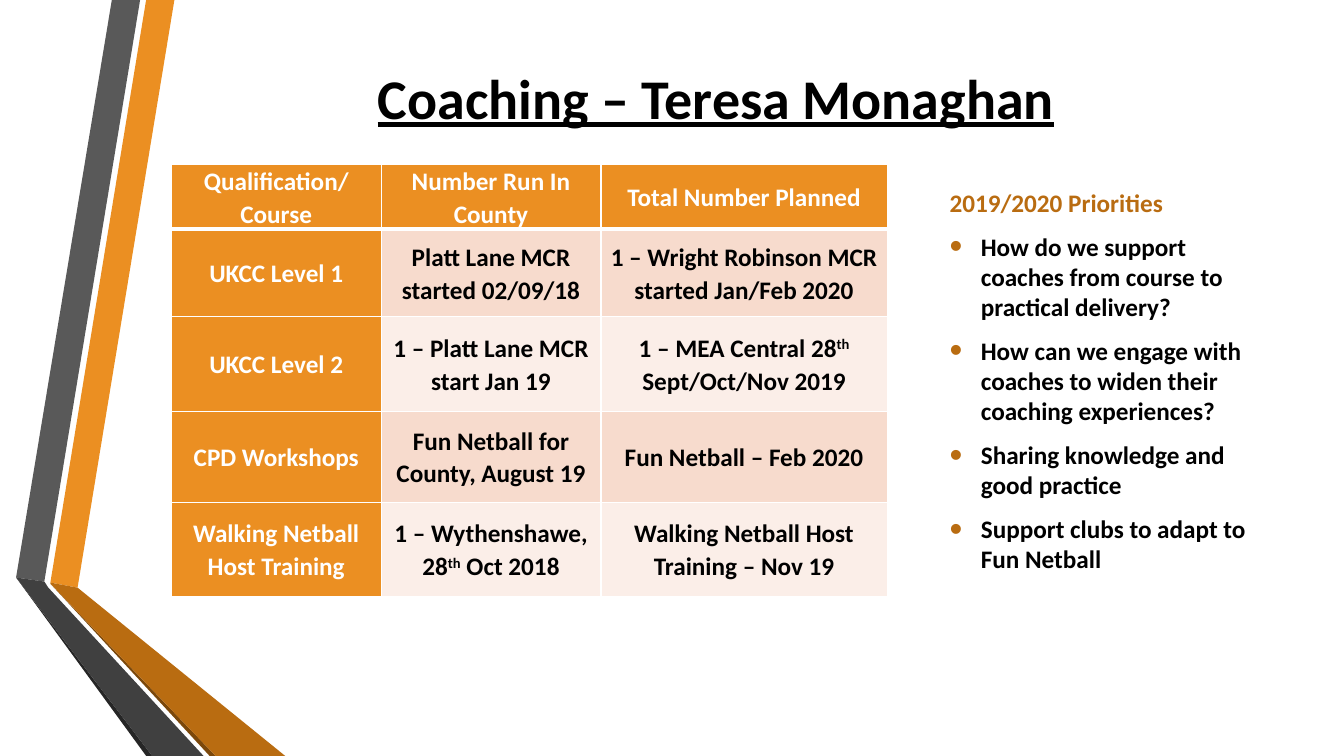
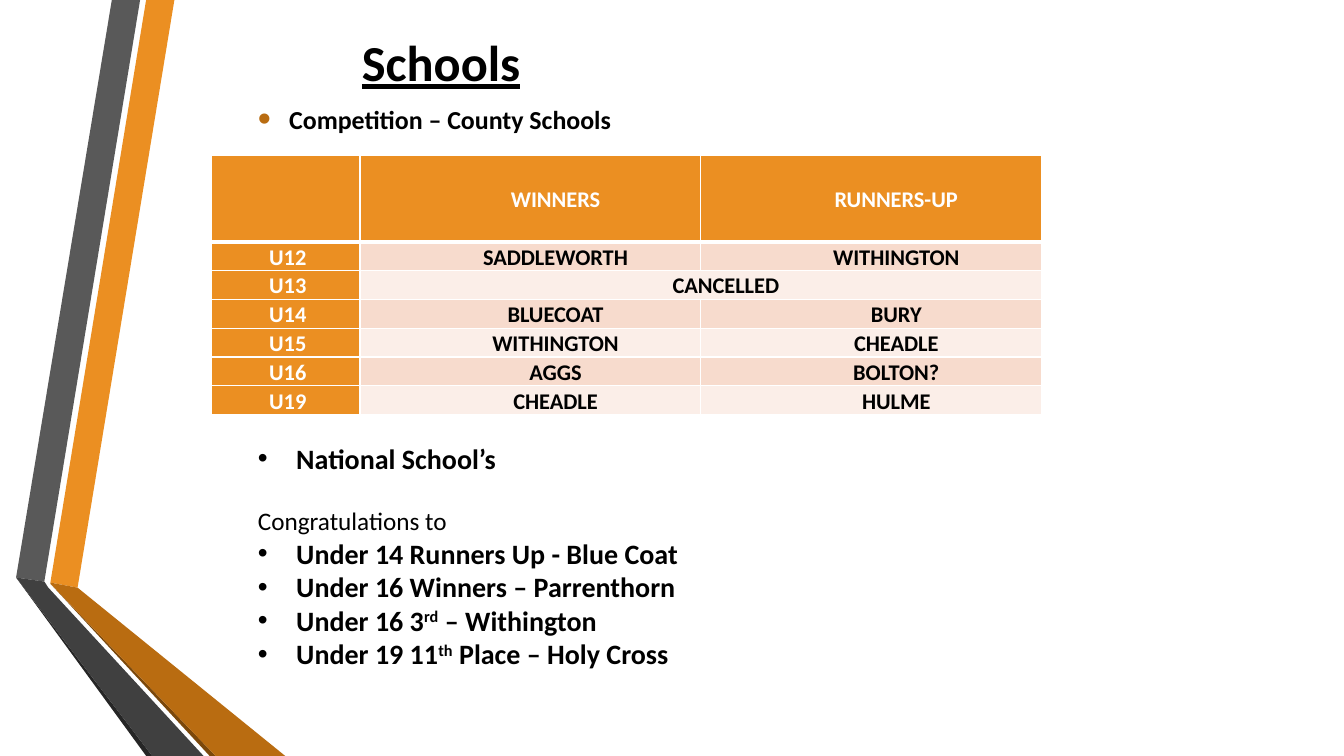
from lxml import etree
from pptx import Presentation, util as u
from pptx.dml.color import RGBColor
from pptx.enum import text
from pptx.oxml import ns

FONT = "Calibri"
WHITE, BLACK = "FFFFFF", "000000"
ORANGE, BROWN = "EB8F22", "B96C11"
BANDS = ("F7DBCD", "FBEEE8")
CENTER, MIDDLE = text.PP_ALIGN.CENTER, text.MSO_ANCHOR.MIDDLE
RIBBONS = (
    (ORANGE, [(0.5, 5.78), (0.77, 5.83), (1.73, 0), (1.45, 0)]),
    ("595959", [(1.39, 0), (1.11, 0), (0.16, 5.73), (0.44, 5.77)]),
    ("262626", [(0.16, 5.73), (1.45, 7.5), (1.51, 7.5)]),
    ("7B480B", [(0.5, 5.79), (2.08, 7.5), (2.14, 7.5)]),
    (BROWN, [(0.5, 5.79), (2.14, 7.5), (2.83, 7.5), (0.77, 5.83), (0.5, 5.78)]),
    ("404040", [(2.02, 7.5), (0.48, 5.83), (0.44, 5.77), (0.16, 5.73), (1.51, 7.5)]),
)
TITLE = {"size": u.Pt(40), "bold": True, "underline": True}
BODY = {"size": u.Pt(18), "bold": True}
SPACED = {"space_before": u.Pt(3.6), "space_after": u.Pt(6)}
ACCENT_BULLET = {"color": BROWN, "percent": 145, "indent": 0.31}
PLAIN_BULLET = {"color": BLACK, "percent": 100, "indent": 0.38}

COURSES = [
    ["Qualification/\nCourse", "Number Run In County", "Total Number Planned"],
    ["UKCC Level 1", "Platt Lane MCR started 02/09/18",
     "1 – Wright Robinson MCR started Jan/Feb 2020"],
    ["UKCC Level 2", "1 – Platt Lane MCR start Jan 19",
     "1 – MEA Central 28^th^ Sept/Oct/Nov 2019"],
    ["CPD Workshops", "Fun Netball for County, August 19", "Fun Netball – Feb 2020"],
    ["Walking Netball Host Training", "1 – Wythenshawe, 28^th^ Oct 2018",
     "Walking Netball Host Training – Nov 19"],
]
PRIORITIES = [
    "How do we support coaches from course to practical delivery?",
    "How can we engage with coaches to widen their coaching experiences?",
    "Sharing knowledge and good practice",
    "Support clubs to adapt to Fun Netball",
]
RESULTS = [
    ["", "WINNERS", "RUNNERS-UP"],
    ["U12", "SADDLEWORTH", "WITHINGTON"],
    ["U13", "CANCELLED", None],
    ["U14", "BLUECOAT", "BURY"],
    ["U15", "WITHINGTON", "CHEADLE"],
    ["U16", "AGGS", "BOLTON?"],
    ["U19", "CHEADLE", "HULME"],
]
PLACINGS = [
    "Under 14 Runners Up - Blue Coat",
    "Under 16 Winners – Parrenthorn",
    "Under 16 3^rd^ – Withington",
    "Under 19 11^th^ Place – Holy Cross",
]


def color(value):
    """Return the colour for a hex string."""
    return RGBColor.from_string(value)


def apply(target, values):
    """Set each attribute in values on the target."""
    for name, value in values.items():
        setattr(target, name, value)


def add_child(parent, tag, **attributes):
    """Append a drawing element and return it."""
    return etree.SubElement(parent, ns.qn(tag), attributes)


def set_indent(paragraph, left, first=0):
    """Set the left and first-line indents in inches."""
    properties = paragraph._p.get_or_add_pPr()
    properties.set("marL", str(u.Inches(left)))
    properties.set("indent", str(u.Inches(first)))


def add_bullet(paragraph, bullet):
    """Give the paragraph a hanging round bullet."""
    set_indent(paragraph, bullet["indent"], -bullet["indent"])
    properties = paragraph._p.get_or_add_pPr()
    bullet_color = add_child(properties, "a:buClr")
    add_child(bullet_color, "a:srgbClr", val=bullet["color"])
    add_child(properties, "a:buSzPct", val=str(bullet["percent"] * 1000))
    add_child(properties, "a:buFont", typeface="Arial")
    add_child(properties, "a:buChar", char="•")


def write(paragraph, content, font, hue=BLACK, layout=None, bullet=None):
    """Fill a paragraph, raising the parts between carets."""
    apply(paragraph, layout or {})
    if bullet:
        add_bullet(paragraph, bullet)
    for position, part in enumerate(content.split("^")):
        run = paragraph.add_run()
        run.text = part
        apply(run.font, {"name": FONT, **font})
        run.font.color.rgb = color(hue)
        if position % 2:
            run._r.get_or_add_rPr().set("baseline", "30000")


def add_text(slide, box, paragraphs, anchor=text.MSO_ANCHOR.TOP):
    """Add a wrapped text box holding the given paragraphs."""
    frame = slide.shapes.add_textbox(*map(u.Inches, box)).text_frame
    apply(frame, {"word_wrap": True, "vertical_anchor": anchor})
    for index, values in enumerate(paragraphs):
        paragraph = frame.add_paragraph() if index else frame.paragraphs[0]
        write(paragraph, **values)


def add_ribbons(slide):
    """Draw the folded ribbons at the left edge."""
    for fill, points in RIBBONS:
        corners = [(u.Inches(x), u.Inches(y)) for x, y in points]
        builder = slide.shapes.build_freeform(*corners[0])
        builder.add_line_segments(corners[1:], close=True)
        shape = builder.convert_to_shape()
        shape.shadow.inherit = False
        shape.fill.solid()
        shape.fill.fore_color.rgb = color(fill)
        shape.line.fill.background()


def set_borders(cell, row):
    """Draw white borders, thick below the header row."""
    properties = cell._tc.get_or_add_tcPr()
    widths = {"L": 1, "R": 1, "T": 3 if row == 1 else 1, "B": 1 if row else 3}
    for index, (side, width) in enumerate(widths.items()):
        line = add_child(properties, f"a:ln{side}", w=str(u.Pt(width)))
        add_child(add_child(line, "a:solidFill"), "a:srgbClr", val=WHITE)
        properties.insert(index, line)


def add_grid(slide, origin, columns, heights, rows, size, inset, indent=0):
    """Add a banded table with an orange header row and first column."""
    box = (*origin, sum(columns), sum(heights))
    frame = slide.shapes.add_table(len(rows), len(columns), *map(u.Inches, box))
    table = frame.table
    table.horz_banding = False
    for column, width in zip(table.columns, columns):
        column.width = u.Inches(width)
    for line, height in zip(table.rows, heights):
        line.height = u.Inches(height)
    margins = {"margin_left": u.Inches(inset), "margin_right": u.Inches(inset),
               "margin_top": 0, "margin_bottom": 0, "vertical_anchor": MIDDLE}
    for row, values in enumerate(rows):
        for column, content in enumerate(values):
            cell = table.cell(row, column)
            heading = row == 0 or column == 0
            apply(cell, margins)
            cell.fill.solid()
            cell.fill.fore_color.rgb = color(ORANGE if heading else BANDS[(row - 1) % 2])
            set_borders(cell, row)
            if content is None:
                table.cell(row, column - 1).merge(cell)
                continue
            left_aligned = indent and column == 0
            layout = {"line_spacing": 1.07,
                      "alignment": text.PP_ALIGN.LEFT if left_aligned else CENTER}
            for index, part in enumerate(content.split("\n")):
                target = cell.text_frame
                paragraph = target.add_paragraph() if index else target.paragraphs[0]
                set_indent(paragraph, indent)
                write(paragraph, part, {"size": u.Pt(size), "bold": True},
                      WHITE if heading else BLACK, layout)


def add_coaching(slide):
    """Build the coaching slide."""
    add_text(slide, (1.62, 0, 10.96, 1.92),
             [{"content": "Coaching – Teresa Monaghan", "font": TITLE,
               "layout": {"alignment": CENTER}}], MIDDLE)
    add_grid(slide, (1.7, 1.63), (2.08, 2.18, 2.84), (0.62, 0.87, 0.94, 0.9, 0.94),
             COURSES, 18, 0.06)
    heading = {"content": "2019/2020 Priorities", "font": BODY, "hue": BROWN, "layout": SPACED}
    items = [{"content": item, "font": BODY, "layout": SPACED, "bullet": ACCENT_BULLET}
             for item in PRIORITIES]
    add_text(slide, (9.32, 1.8, 3.25, 3.95), [heading, *items], MIDDLE)


def add_schools(slide):
    """Build the schools slide."""
    add_text(slide, (3.49, 0.26, 5.89, 0.71),
             [{"content": "Schools", "font": {**TITLE, "size": u.Pt(36)}}])
    add_text(slide, (2.46, 0.96, 5.45, 0.44),
             [{"content": "Competition – County Schools",
               "font": {**BODY, "size": u.Pt(18.5)}, "bullet": ACCENT_BULLET}], MIDDLE)
    add_grid(slide, (2.1, 1.54), (1.47, 3.38, 3.38), [0.86] + [0.28] * 6,
             RESULTS, 16, 0.07, 0.5)
    large = {**BODY, "size": u.Pt(20)}
    news, *placings = [{"content": item, "font": large, "bullet": PLAIN_BULLET}
                       for item in ["National School’s", *PLACINGS]]
    thanks = {"content": "Congratulations to", "font": {**BODY, "bold": False},
              "layout": {"space_before": u.Pt(22)}}
    add_text(slide, (2.46, 4.33, 9.51, 2.73), [news, thanks, *placings])


def main():
    """Build and save the presentation."""
    presentation = Presentation()
    apply(presentation, {"slide_width": u.Inches(13.33), "slide_height": u.Inches(7.5)})
    for build in (add_coaching, add_schools):
        slide = presentation.slides.add_slide(presentation.slide_layouts[6])
        add_ribbons(slide)
        build(slide)
    presentation.save("out.pptx")


if __name__ == "__main__":
    main()
